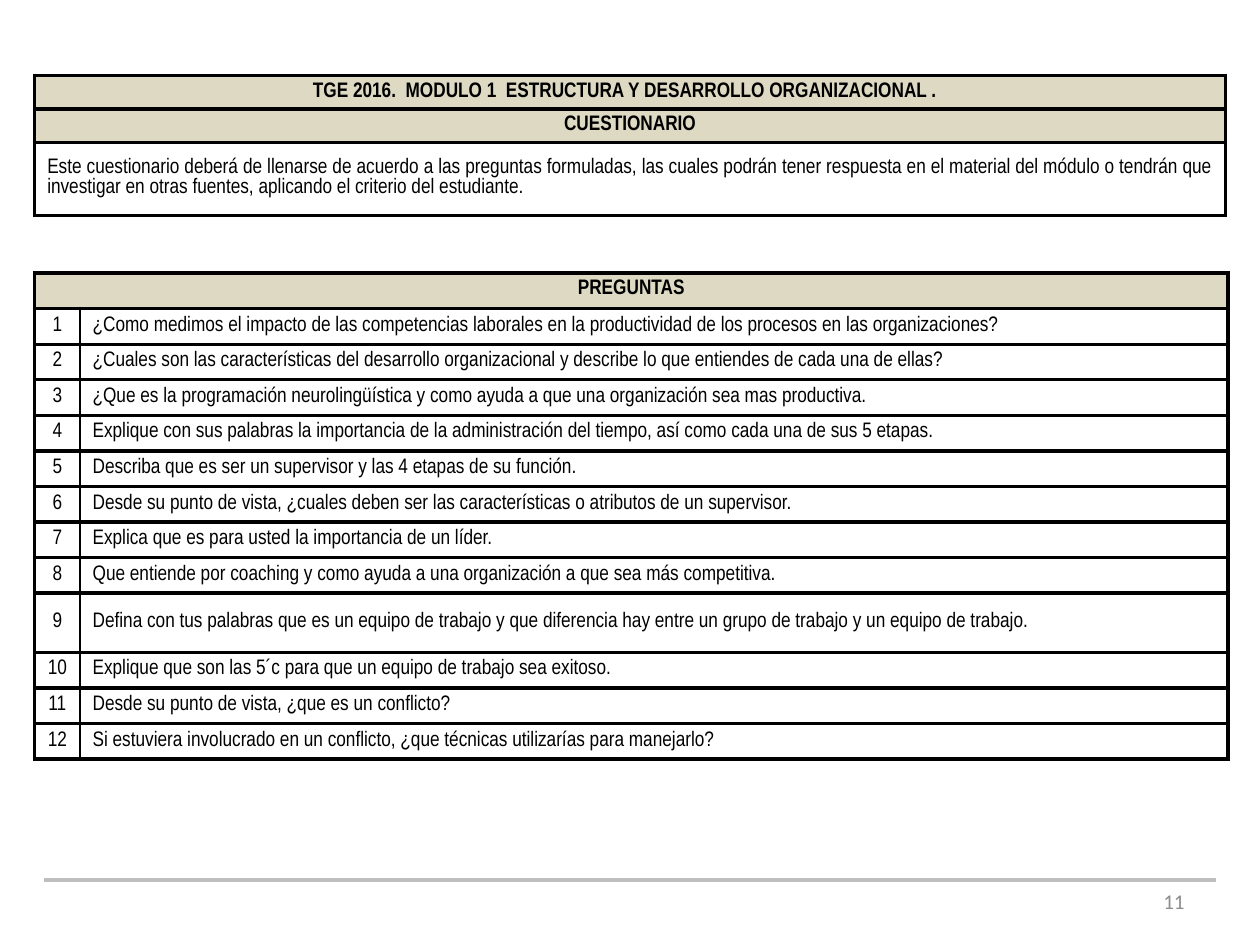
from lxml import etree
from pptx import Presentation
from pptx.dml.color import RGBColor
from pptx.enum.shapes import MSO_CONNECTOR
from pptx.enum.text import MSO_ANCHOR, PP_ALIGN
from pptx.oxml.ns import qn
from pptx.util import Inches, Pt

CENTER, JUSTIFY, RIGHT, LEFT = PP_ALIGN.CENTER, PP_ALIGN.JUSTIFY, PP_ALIGN.RIGHT, PP_ALIGN.LEFT
TOP, MIDDLE = MSO_ANCHOR.TOP, MSO_ANCHOR.MIDDLE
STRAIGHT = MSO_CONNECTOR.STRAIGHT

SLIDE_WIDTH, SLIDE_HEIGHT = 10, 7.5
BLACK, WHITE, SAND, GRAY, RULE_GRAY = "000000", "FFFFFF", "DDD9C3", "8C8C8C", "BFBFBF"
THICK, THIN = 2.25, 1
INTRO_HEIGHT, INSTRUCTIONS_HEIGHT = 1.11, 0.58
QUESTIONS_HEIGHT, TALL_ROW_HEIGHT = 3.86, 0.47
NUMBER_WIDTH = 0.36
TALL_QUESTION = 9

BODY = {"name": "Arial Narrow", "size": Pt(12), "bold": False}
HEADING = {**BODY, "bold": True}
PAGE_NUMBER = {"name": "Calibri", "size": Pt(12), "bold": False}

# Vertical cell margins, small enough for the low rows
MARGINS = {
    TOP: {"margin_top": Inches(0.05), "margin_bottom": Inches(0.01)},
    MIDDLE: {"margin_top": Inches(0.02), "margin_bottom": Inches(0.03)},
}

TITLES = ["TGE 2016.  MODULO 1  ESTRUCTURA Y DESARROLLO ORGANIZACIONAL .", "CUESTIONARIO"]
INSTRUCTIONS = (
    "Este cuestionario deberá de llenarse de acuerdo a las preguntas formuladas, "
    "las cuales podrán tener respuesta en el material del módulo o tendrán que "
    "investigar en otras fuentes, aplicando el criterio del estudiante."
)
QUESTIONS = [
    "¿Como medimos el impacto de las competencias laborales en la productividad de los procesos en las organizaciones?",
    "¿Cuales son las características del desarrollo organizacional y describe lo que entiendes de cada una de ellas?",
    "¿Que es la programación neurolingüística y como ayuda a que una organización sea mas productiva.",
    "Explique con sus palabras la importancia de la administración del tiempo, así como cada una de sus 5 etapas.",
    "Describa que es ser un supervisor y las 4 etapas de su función.",
    "Desde su punto de vista, ¿cuales deben ser las características o atributos de un supervisor.",
    "Explica que es para usted la importancia de un líder.",
    "Que entiende por coaching y como ayuda a una organización a que sea más competitiva.",
    "Defina con tus palabras que es un equipo de trabajo y que diferencia hay entre un grupo de trabajo y un equipo de trabajo.",
    "Explique que son las 5´c para que un equipo de trabajo sea exitoso.",
    "Desde su punto de vista, ¿que es un conflicto?",
    "Si estuviera involucrado en un conflicto, ¿que técnicas utilizarías para manejarlo?",
]


def color(value):
    return RGBColor.from_string(value)


def write_text(frame, text, font_format, align, font_color=BLACK):
    paragraph = frame.paragraphs[0]
    paragraph.alignment = align
    run = paragraph.add_run()
    run.text = text
    for name, value in font_format.items():
        setattr(run.font, name, value)
    run.font.color.rgb = color(font_color)


def set_borders(cell, left=THICK, right=THICK):
    """Border lines come before the fill in the cell properties."""
    properties = cell._tc.get_or_add_tcPr()
    widths = {"a:lnL": left, "a:lnR": right, "a:lnT": THICK, "a:lnB": THICK}
    for index, (tag, width) in enumerate(widths.items()):
        line = etree.Element(qn(tag), w=str(Pt(width)))
        fill = etree.SubElement(line, qn("a:solidFill"))
        etree.SubElement(fill, qn("a:srgbClr"), val=BLACK)
        properties.insert(index, line)


def fill_cell(cell, text, font_format, align, anchor, fill=None):
    cell.vertical_anchor = anchor
    for name, value in MARGINS[anchor].items():
        setattr(cell, name, value)
    if fill:
        cell.fill.solid()
        cell.fill.fore_color.rgb = color(fill)
    else:
        cell.fill.background()
    write_text(cell.text_frame, text, font_format, align)


def add_grid(slide, left, top, columns, rows):
    table = slide.shapes.add_table(
        len(rows), len(columns), Inches(left), Inches(top),
        Inches(sum(columns)), Inches(sum(rows)),
    ).table
    table.first_row = table.horz_banding = False
    for column, width in zip(table.columns, columns):
        column.width = Inches(width)
    for row, height in zip(table.rows, rows):
        row.height = Inches(height)
    return table


def add_intro(slide, left, top, width):
    title_height = (INTRO_HEIGHT - INSTRUCTIONS_HEIGHT) / len(TITLES)
    rows = [title_height] * len(TITLES) + [INSTRUCTIONS_HEIGHT]
    table = add_grid(slide, left, top, [width], rows)
    for row, title in enumerate(TITLES):
        fill_cell(table.cell(row, 0), title, HEADING, CENTER, TOP, SAND)
    table.cell(0, 0).margin_right = Inches(0.18)
    fill_cell(table.cell(len(TITLES), 0), INSTRUCTIONS, BODY, JUSTIFY, MIDDLE, WHITE)
    for cell in table.iter_cells():
        set_borders(cell)


def add_questions(slide, left, top, width):
    row_height = (QUESTIONS_HEIGHT - TALL_ROW_HEIGHT) / len(QUESTIONS)
    rows = [row_height] * (len(QUESTIONS) + 1)
    rows[TALL_QUESTION] = TALL_ROW_HEIGHT
    table = add_grid(slide, left, top, [NUMBER_WIDTH, width - NUMBER_WIDTH], rows)

    # Heading across both columns
    heading, spanned = table.cell(0, 0), table.cell(0, 1)
    heading.merge(spanned)
    fill_cell(heading, "PREGUNTAS", HEADING, CENTER, TOP, SAND)
    for cell in (heading, spanned):
        set_borders(cell)

    # Numbered questions
    for number, question in enumerate(QUESTIONS, start=1):
        number_cell, question_cell = table.cell(number, 0), table.cell(number, 1)
        fill_cell(number_cell, str(number), BODY, CENTER, MIDDLE)
        fill_cell(question_cell, question, BODY, LEFT if number == 2 else JUSTIFY, MIDDLE)
        set_borders(number_cell, right=THIN)
        set_borders(question_cell, left=THIN)


def add_footer(slide, left, top, width):
    # Rule
    rule = slide.shapes.add_connector(
        STRAIGHT, Inches(left), Inches(top), Inches(left + width), Inches(top)
    )
    rule.line.color.rgb = color(RULE_GRAY)
    rule.line.width = Pt(2)
    etree.SubElement(rule._element.spPr, qn("a:effectLst"))

    # Page number
    number_width = 2.33
    box = slide.shapes.add_textbox(
        Inches(left + width - 0.15 - number_width), Inches(top - 0.03),
        Inches(number_width), Inches(0.4),
    )
    box.text_frame.word_wrap = True
    box.text_frame.vertical_anchor = MIDDLE
    write_text(box.text_frame, "11", PAGE_NUMBER, RIGHT, GRAY)


def main():
    presentation = Presentation()
    presentation.slide_width = Inches(SLIDE_WIDTH)
    presentation.slide_height = Inches(SLIDE_HEIGHT)
    slide = presentation.slides.add_slide(presentation.slide_layouts[6])

    margin = 0.0275 * SLIDE_WIDTH
    add_footer(slide, 0.035 * SLIDE_WIDTH, 0.931 * SLIDE_HEIGHT, 0.93 * SLIDE_WIDTH)
    add_intro(slide, margin, 0.08 * SLIDE_HEIGHT, 0.945 * SLIDE_WIDTH)
    add_questions(slide, margin, 0.289 * SLIDE_HEIGHT, 0.947 * SLIDE_WIDTH)
    presentation.save("out.pptx")


if __name__ == "__main__":
    main()
